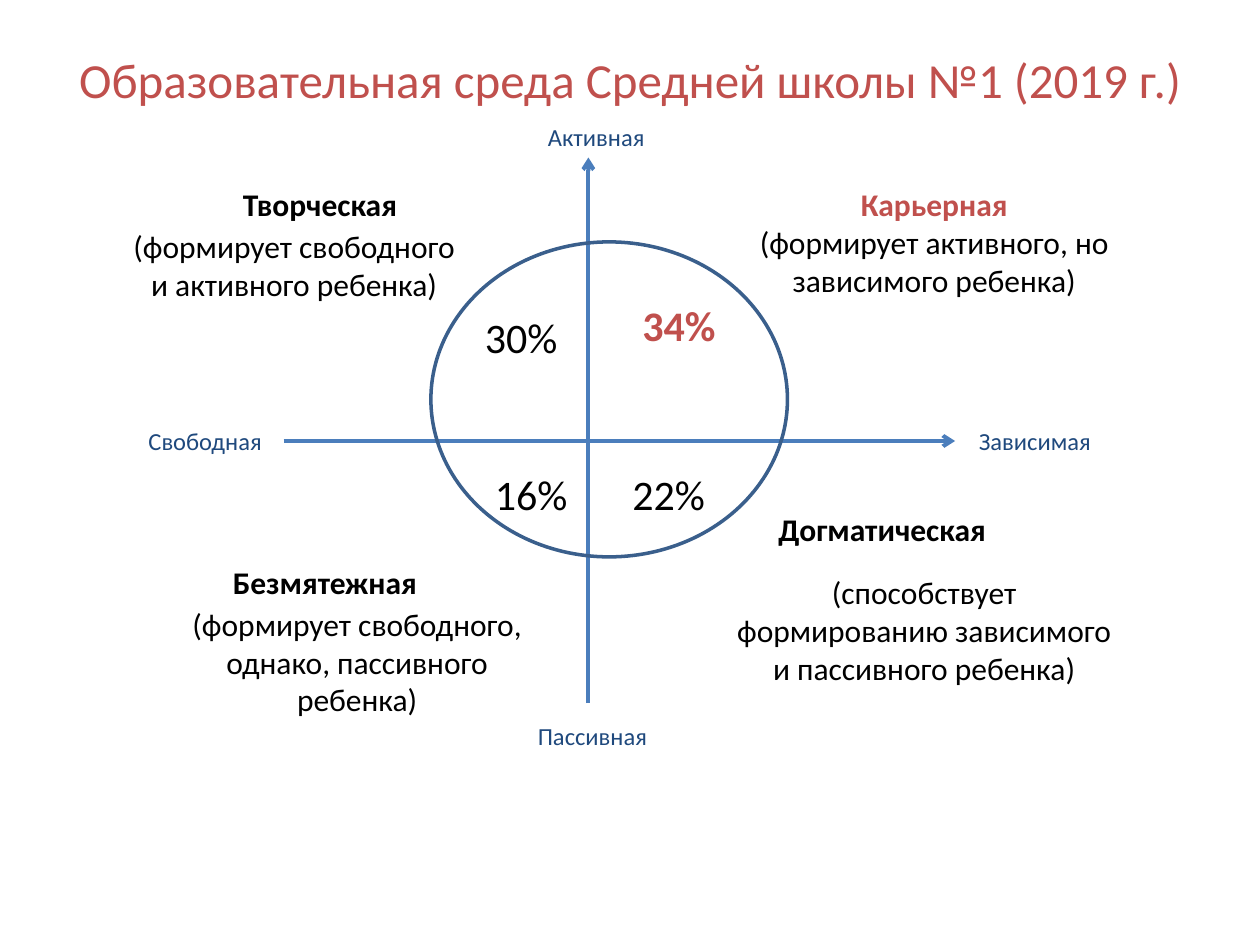
from lxml import etree
from pptx import Presentation
from pptx.dml.color import RGBColor
from pptx.enum.shapes import MSO_CONNECTOR, MSO_SHAPE
from pptx.enum.text import MSO_ANCHOR, PP_ALIGN
from pptx.oxml.ns import qn
from pptx.util import Inches, Pt

RED = RGBColor(0xC0, 0x50, 0x4D)
BLACK = RGBColor(0, 0, 0)
NAVY = RGBColor(0x1F, 0x49, 0x7D)
AXIS_BLUE = RGBColor(0x4B, 0x7E, 0xBC)
ELLIPSE_BLUE = RGBColor(0x3A, 0x5F, 0x8C)
FONT = "Calibri"

TITLE = "Образовательная среда Средней школы №1 (2019 г.)"
CAREER = ("Карьерная", "(формирует активного, но зависимого ребенка)")

# text, left, top, width
HEADINGS = [
    ("Творческая", 1.83, 1.42, 1.5),
    ("Безмятежная", 1.42 + 0.33, 4.42, 1.75),
    ("Догматическая", 6.08, 4, 1.92),
]
DESCRIPTIONS = [
    ("(формирует свободного и активного ребенка)", 0.92, 1.75, 2.83),
    ("(формирует свободного, однако, пассивного ребенка)", 1.42, 4.75, 2.83),
    ("(способствует формированию зависимого и пассивного ребенка)", 5.67, 4.5, 3.33),
]
# text, left, top, is the leading share
SHARES = [
    ("30%", 3.75, 2.42, False),
    ("34%", 5, 2.33, True),
    ("16%", 3.83, 3.67, False),
    ("22%", 4.92, 3.67, False),
]
AXIS_LABELS = [
    ("Активная", 4.25, 0.92),
    ("Пассивная", 4.17, 5.67),
    ("Свободная", 1.08, 3.33),
    ("Зависимая", 7.67, 3.33),
]
# start x, start y, end x, end y
AXES = [(4.67, 5.58, 4.67, 1.25), (2.25, 3.5, 7.58, 3.5)]


def format_paragraph(paragraph, text, size=18, color=BLACK, bold=False, align=PP_ALIGN.LEFT):
    paragraph.text = text
    paragraph.alignment = align
    font = paragraph.font
    font.name, font.size, font.bold = FONT, Pt(size), bold
    font.color.rgb = color


def add_text(slide, text, left, top, width, height=0.4, anchor=MSO_ANCHOR.TOP, **style):
    box = slide.shapes.add_textbox(Inches(left), Inches(top), Inches(width), Inches(height))
    frame = box.text_frame
    frame.word_wrap = True
    frame.vertical_anchor = anchor
    format_paragraph(frame.paragraphs[0], text, **style)
    return frame


def add_axis(slide, *ends):
    axis = slide.shapes.add_connector(MSO_CONNECTOR.STRAIGHT, *map(Inches, ends))
    axis.line.color.rgb = AXIS_BLUE
    axis.line.width = Pt(2.25)
    etree.SubElement(axis.line._get_or_add_ln(), qn("a:tailEnd"), type="arrow")
    etree.SubElement(axis._element.spPr, qn("a:effectLst"))


def main():
    presentation = Presentation()
    presentation.slide_width, presentation.slide_height = Inches(10), Inches(7.5)
    slide = presentation.slides.add_slide(presentation.slide_layouts[6])

    add_text(slide, TITLE, 0.5, 0, 9, 1.25, anchor=MSO_ANCHOR.MIDDLE,
             size=28, color=RED, align=PP_ALIGN.CENTER)
    for ends in AXES:
        add_axis(slide, *ends)

    ellipse = slide.shapes.add_shape(
        MSO_SHAPE.OVAL, Inches(3.42), Inches(1.92), Inches(2.83), Inches(2.5))
    ellipse.shadow.inherit = False
    ellipse.fill.background()
    ellipse.line.color.rgb = ELLIPSE_BLUE
    ellipse.line.width = Pt(2)

    for text, left, top, width in HEADINGS:
        add_text(slide, text, left, top, width, bold=True)

    heading, description = CAREER
    career = add_text(slide, heading, 5.83, 1.42, 3.17, 1.01,
                      color=RED, bold=True, align=PP_ALIGN.CENTER)
    format_paragraph(career.add_paragraph(), description, align=PP_ALIGN.CENTER)

    for text, left, top, leading in SHARES:
        add_text(slide, text, left, top, 0.92, 0.5, size=24,
                 color=RED if leading else BLACK, bold=leading)
    for text, left, top in AXIS_LABELS:
        add_text(slide, text, left, top, 1.17, 0.34, size=14, color=NAVY)
    for text, left, top, width in DESCRIPTIONS:
        height = 0.71 if top < 3.5 else 1.01
        add_text(slide, text, left, top, width, height, align=PP_ALIGN.CENTER)

    presentation.save("out.pptx")


if __name__ == "__main__":
    main()
